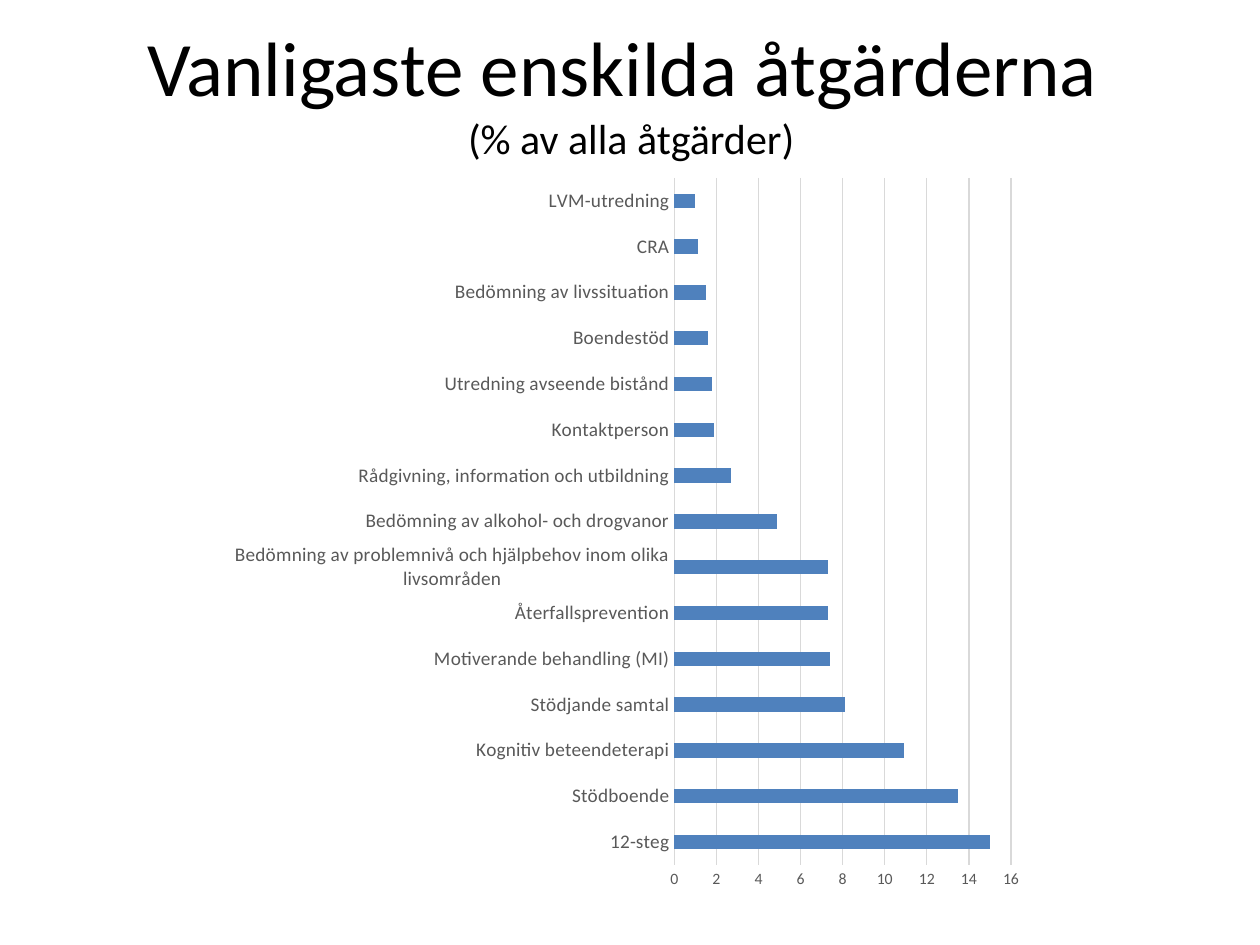
from lxml import etree
from pptx import Presentation
from pptx import util as u
from pptx.chart import data
from pptx.dml.color import RGBColor
from pptx.enum import chart as charts, text
from pptx.oxml import ns

FONT = "Calibri"
COLORS = {"title": "000000", "label": "595959", "line": "D9D9D9", "bar": "4F81BD"}
MEASURES = [
    ("12-steg", 15),
    ("Stödboende", 13.5),
    ("Kognitiv beteendeterapi", 10.9),
    ("Stödjande samtal", 8.1),
    ("Motiverande behandling (MI)", 7.4),
    ("Återfallsprevention", 7.3),
    ("Bedömning av problemnivå och hjälpbehov inom olika livsområden", 7.3),
    ("Bedömning av alkohol- och drogvanor", 4.9),
    ("Rådgivning, information och utbildning", 2.7),
    ("Kontaktperson", 1.9),
    ("Utredning avseende bistånd", 1.8),
    ("Boendestöd", 1.6),
    ("Bedömning av livssituation", 1.5),
    ("CRA", 1.1),
    ("LVM-utredning", 1),
]


def set_attributes(target, values):
    for name, value in values.items():
        setattr(target, name, value)


def format_font(font, size, color):
    set_attributes(font, {"name": FONT, "size": u.Pt(size)})
    font.color.rgb = RGBColor.from_string(COLORS[color])


def format_line(line):
    line.color.rgb = RGBColor.from_string(COLORS["line"])
    line.width = u.Pt(0.75)


def place(left, top, width, height):
    return [u.Inches(length) for length in (left, top, width, height)]


def add_title(slide, box, lines):
    frame = slide.shapes.add_textbox(*box).text_frame
    set_attributes(frame, {"word_wrap": True,
                           "vertical_anchor": text.MSO_ANCHOR.MIDDLE})
    paragraph = frame.paragraphs[0]
    paragraph.alignment = text.PP_ALIGN.CENTER
    for index, (words, size) in enumerate(lines):
        if index:
            paragraph.add_line_break()
        run = paragraph.add_run()
        run.text = words
        format_font(run.font, size, "title")


def set_plot_layout(chart, **fractions):
    """Fix the inner plot area as fractions of the chart."""
    area = chart._chartSpace.find(".//" + ns.qn("c:plotArea"))
    for old in area.findall(ns.qn("c:layout")):
        area.remove(old)
    layout = etree.Element(ns.qn("c:layout"))
    area.insert(0, layout)
    manual = etree.SubElement(layout, ns.qn("c:manualLayout"))
    settings = {"layoutTarget": "inner", "xMode": "edge", "yMode": "edge", **fractions}
    for tag, value in settings.items():
        etree.SubElement(manual, ns.qn("c:" + tag)).set("val", str(value))


def add_bar_chart(slide, box, measures):
    chart_data = data.CategoryChartData()
    chart_data.categories = [name for name, _ in measures]
    chart_data.add_series("Series 1", [share for _, share in measures])
    chart = slide.shapes.add_chart(
        charts.XL_CHART_TYPE.BAR_CLUSTERED, *box, chart_data).chart
    set_attributes(chart, {"has_legend": False, "has_title": False})
    format_font(chart.font, 10, "title")

    # Bars
    plot = chart.plots[0]
    set_attributes(plot, {"gap_width": 219, "vary_by_categories": False})
    fill = plot.series[0].format.fill
    fill.solid()
    fill.fore_color.rgb = RGBColor.from_string(COLORS["bar"])

    # Axes
    for axis, size in ((chart.category_axis, 11), (chart.value_axis, 9)):
        set_attributes(axis, {"major_tick_mark": charts.XL_TICK_MARK.NONE,
                              "minor_tick_mark": charts.XL_TICK_MARK.NONE})
        format_font(axis.tick_labels.font, size, "label")
    format_line(chart.category_axis.format.line)
    value_axis = chart.value_axis
    set_attributes(value_axis, {"minimum_scale": 0, "maximum_scale": 16,
                                "major_unit": 2, "has_major_gridlines": True})
    set_attributes(value_axis.tick_labels, {"number_format": "#,##0",
                                            "number_format_is_linked": False})
    value_axis.format.line.fill.background()
    format_line(value_axis.major_gridlines.format.line)
    set_plot_layout(chart, x=0.58, y=0.03, w=0.39, h=0.9)


def main():
    presentation = Presentation()
    set_attributes(presentation, {"slide_width": u.Inches(10),
                                  "slide_height": u.Inches(7.5)})
    slide = presentation.slides.add_slide(presentation.slide_layouts[6])
    add_title(slide, place(0.7, 0, 8.62, 1.45),
              [("Vanligaste enskilda åtgärderna ", 44), ("(% av alla åtgärder)", 24)])
    add_bar_chart(slide, place(1.38, 1.23, 6.85, 6.06), MEASURES)
    presentation.save("out.pptx")


if __name__ == "__main__":
    main()
